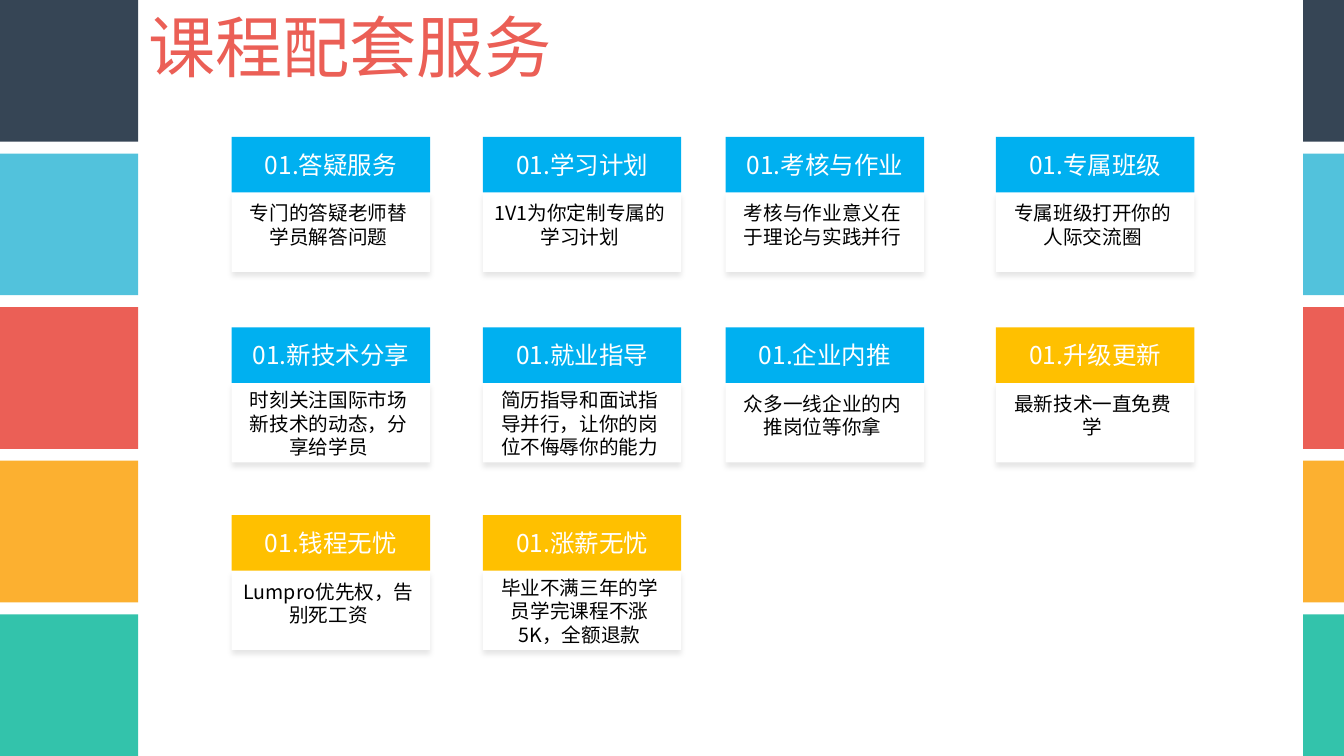
from lxml import etree
from pptx import Presentation
from pptx.dml.color import RGBColor
from pptx.enum import shapes, text
from pptx.oxml.ns import qn
from pptx.util import Cm, Pt

FONT = "Noto Sans CJK SC"
NAVY = RGBColor(0x36, 0x45, 0x55)
SKY = RGBColor(0x52, 0xC2, 0xDC)
CORAL = RGBColor(0xEB, 0x5F, 0x56)
AMBER = RGBColor(0xFC, 0xB0, 0x30)
TEAL = RGBColor(0x33, 0xC3, 0xAB)
BLUE = RGBColor(0x00, 0xB0, 0xF0)
GOLD = RGBColor(0xFF, 0xC0, 0x00)
WHITE = RGBColor(0xFF, 0xFF, 0xFF)
BLACK = RGBColor(0x00, 0x00, 0x00)

SLIDE_W, SLIDE_H = 33.87, 19.05
STRIPE_COLORS = [NAVY, SKY, CORAL, AMBER, TEAL]
STRIPE_GAP = 0.3
COLUMNS = [5.84, 12.17, 18.29, 25.1]
ROWS = [3.45, 8.25, 12.98]
CARD_W, HEADER_H, BODY_H = 5, 1.4, 2
TWO_LINES = 16  # most characters that fit on two lines of a card

CARDS = [
    ("答疑服务", "专门的答疑老师替学员解答问题", BLUE),
    ("学习计划", "1V1为你定制专属的学习计划", BLUE),
    ("考核与作业", "考核与作业意义在于理论与实践并行", BLUE),
    ("专属班级", "专属班级打开你的人际交流圈", BLUE),
    ("新技术分享", "时刻关注国际市场新技术的动态，分享给学员", BLUE),
    ("就业指导", "简历指导和面试指导并行，让你的岗位不侮辱你的能力", BLUE),
    ("企业内推", "众多一线企业的内推岗位等你拿", BLUE),
    ("升级更新", "最新技术一直免费学", GOLD),
    ("钱程无忧", "Lumpro优先权，告别死工资", GOLD),
    ("涨薪无忧", "毕业不满三年的学员学完课程不涨5K，全额退款", GOLD),
]


def write(tf, words, size, color, align):
    p = tf.paragraphs[0]
    p.text = words
    p.alignment = align
    p.font.size = Pt(size)
    p.font.color.rgb = color
    p.font.name = FONT
    etree.SubElement(p.font._element, qn("a:ea"), typeface=FONT)


def add_rect(s, x, y, w, h, color):
    sp = s.shapes.add_shape(shapes.MSO_SHAPE.RECTANGLE, Cm(x), Cm(y), Cm(w), Cm(h))
    sp.shadow.inherit = False
    sp.fill.solid()
    sp.fill.fore_color.rgb = color
    sp.line.fill.background()
    return sp


def add_soft_shadow(sp):
    """Give the shape a faint shadow that falls straight down."""
    effects = sp._element.spPr.find(qn("a:effectLst"))
    shadow = etree.SubElement(effects, qn("a:outerShdw"), blurRad=str(Pt(4)),
                              dist=str(Pt(3)), dir="5400000", rotWithShape="0")
    black = etree.SubElement(shadow, qn("a:srgbClr"), val=str(BLACK))
    etree.SubElement(black, qn("a:alpha"), val="9000")


def add_stripes(s, x, w):
    """Stack the coloured blocks down one edge of the slide."""
    h = (SLIDE_H + STRIPE_GAP) / len(STRIPE_COLORS) - STRIPE_GAP
    for i, color in enumerate(STRIPE_COLORS):
        add_rect(s, x, i * (h + STRIPE_GAP), w, h, color)


def add_title(s, x, y, w, h):
    sp = s.shapes.title
    sp.left, sp.top, sp.width, sp.height = Cm(x), Cm(y), Cm(w), Cm(h)
    tf = sp.text_frame
    tf.word_wrap = False
    tf.auto_size = text.MSO_AUTO_SIZE.NONE
    tf.vertical_anchor = text.MSO_ANCHOR.MIDDLE
    write(tf, "课程配套服务", 48, CORAL, text.PP_ALIGN.LEFT)


def add_card(s, x, y, heading, detail, color):
    body_y = y + HEADER_H
    add_soft_shadow(add_rect(s, x, body_y, CARD_W, BODY_H, WHITE))

    tf = add_rect(s, x, y, CARD_W, HEADER_H, color).text_frame
    tf.word_wrap = True
    tf.vertical_anchor = text.MSO_ANCHOR.MIDDLE
    write(tf, f"01.{heading}", 17.5, WHITE, text.PP_ALIGN.CENTER)

    gap, h = (0.1, 1.45) if len(detail) <= TWO_LINES else (0, 2.06)
    tf = s.shapes.add_textbox(Cm(x), Cm(body_y + gap), Cm(4.88), Cm(h)).text_frame
    tf.word_wrap = True
    write(tf, detail, 14, BLACK, text.PP_ALIGN.CENTER)


def main():
    prs = Presentation()
    prs.slide_width, prs.slide_height = Cm(SLIDE_W), Cm(SLIDE_H)
    s = prs.slides.add_slide(prs.slide_layouts[5])
    add_stripes(s, 0, 3.48)
    add_stripes(s, 32.84, SLIDE_W - 32.84)
    add_title(s, 3.48, 0, 10.67, 2.31)
    for i, card in enumerate(CARDS):
        row, col = divmod(i, len(COLUMNS))
        add_card(s, COLUMNS[col], ROWS[row], *card)
    prs.save("out.pptx")


if __name__ == "__main__":
    main()
